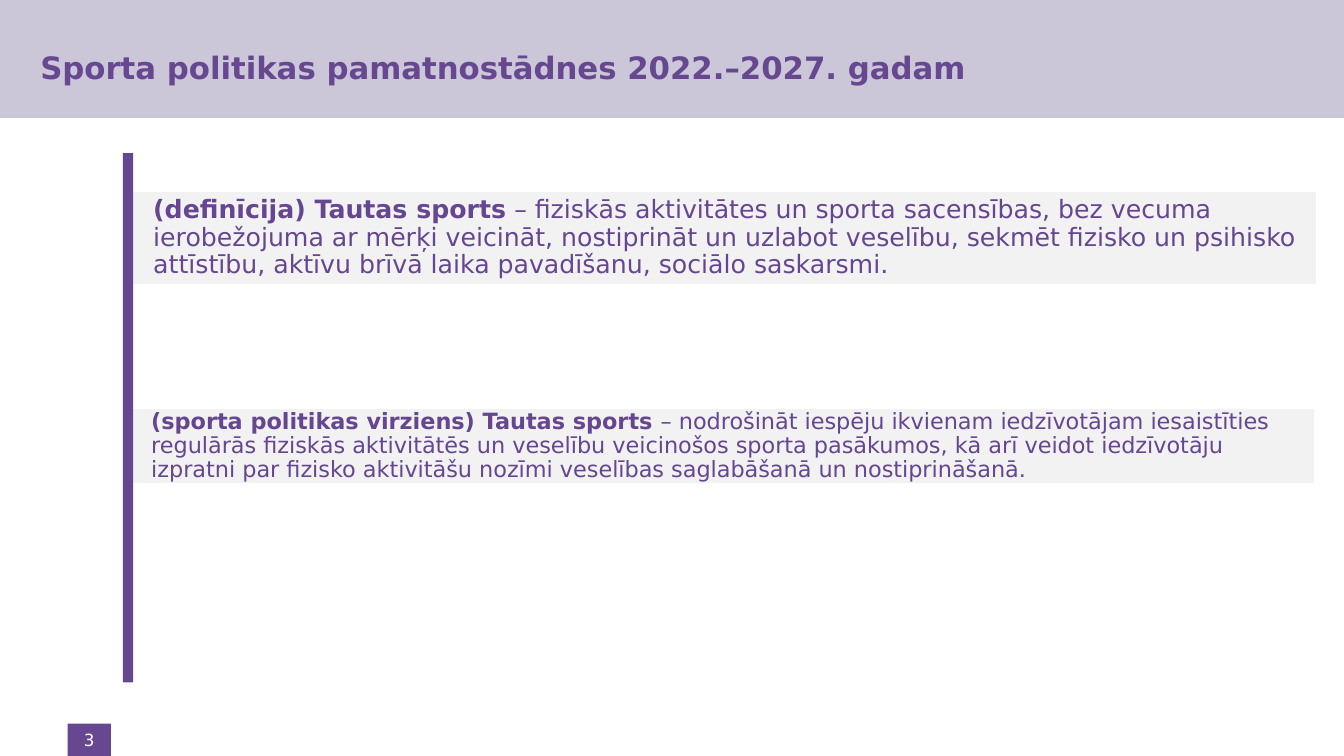
from pptx import Presentation
from pptx.dml.color import RGBColor
from pptx.enum.shapes import MSO_SHAPE
from pptx.enum.text import MSO_ANCHOR, PP_ALIGN
from pptx.util import Inches, Pt

RECT = MSO_SHAPE.RECTANGLE
MIDDLE = MSO_ANCHOR.MIDDLE
LEFT, CENTER = PP_ALIGN.LEFT, PP_ALIGN.CENTER

LILAC = RGBColor(0xCB, 0xC7, 0xD8)
PURPLE = RGBColor(0x66, 0x47, 0x90)
VIOLET = RGBColor(0x66, 0x46, 0x90)
GREY = RGBColor(0xF2, 0xF2, 0xF2)
WHITE = RGBColor(0xFF, 0xFF, 0xFF)

FONT = "DejaVu Sans"
SLIDE_W, SLIDE_H = 13.33, 7.5

# Size, then bold term and plain explanation
STATEMENTS = [
    (18, "(definīcija) Tautas sports",
     " – fiziskās aktivitātes un sporta sacensības, bez vecuma ierobežojuma "
     "ar mērķi veicināt, nostiprināt un uzlabot veselību, sekmēt fizisko un "
     "psihisko attīstību, aktīvu brīvā laika pavadīšanu, sociālo saskarsmi."),
    (16, "(sporta politikas virziens) Tautas sports ",
     "– nodrošināt iespēju ikvienam iedzīvotājam iesaistīties regulārās "
     "fiziskās aktivitātēs un veselību veicinošos sporta pasākumos, kā arī "
     "veidot iedzīvotāju izpratni par fizisko aktivitāšu nozīmi veselības "
     "saglabāšanā un nostiprināšanā."),
]


def add_rect(slide, box, fill, line=None):
    sp = slide.shapes.add_shape(RECT, *map(Inches, box))
    sp.shadow.inherit = False
    sp.fill.solid()
    sp.fill.fore_color.rgb = fill
    if line is None:
        sp.line.fill.background()
    else:
        sp.line.color.rgb = line
        sp.line.width = Pt(2)
    return sp


def write(sp, runs, size, color, insets, align=LEFT):
    """Fill a shape with one paragraph of (text, bold) runs."""
    tf = sp.text_frame
    tf.word_wrap = True
    tf.vertical_anchor = MIDDLE
    (tf.margin_left, tf.margin_top,
     tf.margin_right, tf.margin_bottom) = map(Inches, insets)
    p = tf.paragraphs[0]
    p.alignment = align
    for text, bold in runs:
        r = p.add_run()
        r.text = text
        r.font.name = FONT
        r.font.size = Pt(size)
        r.font.bold = bold
        r.font.color.rgb = color
    return p


def add_header(slide, box, title):
    x, y, w, h = box
    add_rect(slide, box, LILAC)
    sp = slide.shapes.add_textbox(
        *map(Inches, (x + 0.4, y + 0.04, w - 1.18, h + 0.08)))
    write(sp, [(title, True)], 22, PURPLE, (0, 0.05, 0.1, 0.05))


def add_page_number(slide, box, number):
    sp = add_rect(slide, box, PURPLE)
    write(sp, [(number, False)], 12, WHITE, (0.04,) * 4, CENTER)


def add_statements(slide, box, statements):
    x, y, w, h = box
    # Grey panels: offset from the box, and height
    panels = [(0.02, 0.37, 0.94), (0, 2.52, 0.77)]
    for (dx, dy, height), (size, term, text) in zip(panels, statements):
        sp = add_rect(slide, (x + dx, y + dy, w, height), GREY, WHITE)
        p = write(sp, [(term, True), (text, False)], size, VIOLET,
                  (0.28, 0.05, 0.09, 0.05))
        p.line_spacing = 0.9
        p.space_after = Pt(5.6)
    # Vertical bar over the left edge of the panels
    add_rect(slide, (x, y, 0.1, h), VIOLET)


def main():
    prs = Presentation()
    prs.slide_width, prs.slide_height = Inches(SLIDE_W), Inches(SLIDE_H)
    slide = prs.slides.add_slide(prs.slide_layouts[6])

    add_header(slide, (0, 0, SLIDE_W, 1.17),
               "Sporta politikas pamatnostādnes 2022.–2027. gadam")
    add_page_number(slide, (0.67, SLIDE_H - 0.32, 0.43, 0.32), "3")
    add_statements(slide, (1.22, 1.52, 11.83, 5.25), STATEMENTS)

    prs.save("out.pptx")


if __name__ == "__main__":
    main()
